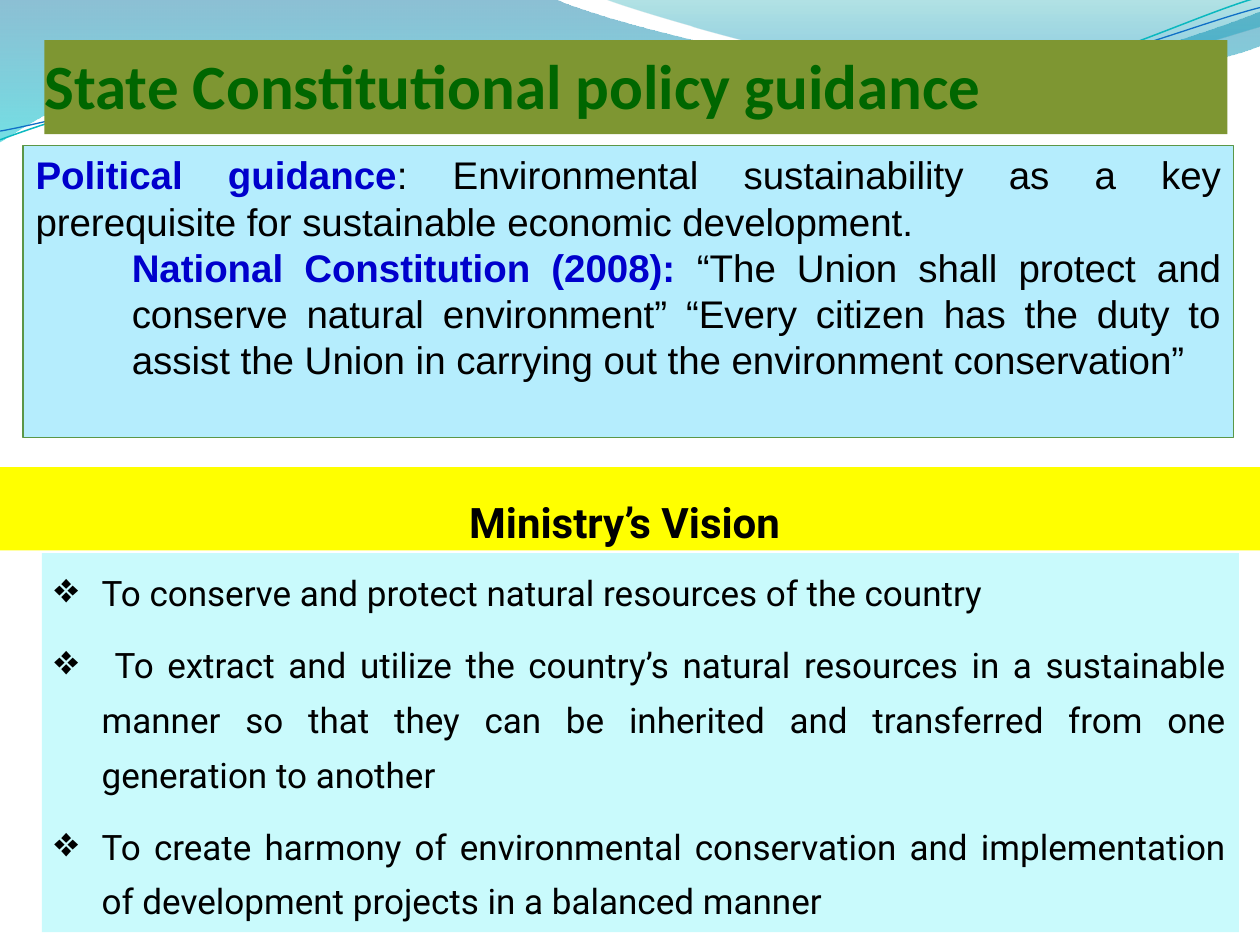
import math

from lxml import etree
from pptx import Presentation
from pptx.dml import color
from pptx.enum import shapes, text
from pptx.oxml import ns
from pptx.util import Pt

HUES = {
    "blue": "0074A1", "cyan": "00C6CF", "teal": "00A1A9", "sea": "008BBF",
    "aqua": "0AB8BF", "royal": "0F6FC6", "olive": "7E9632", "green": "006600",
    "sky": "B5EDFD", "edge": "5B9747", "navy": "0000CC", "yellow": "FFFF00",
    "ice": "C9FAFC", "black": "000000",
}
LEFT, MID, JUST = (text.PP_ALIGN.LEFT, text.PP_ALIGN.CENTER,
                   text.PP_ALIGN.JUSTIFY)
TOP, HALF = text.MSO_ANCHOR.TOP, text.MSO_ANCHOR.MIDDLE
TILT = 2.7

WAVES = [
    ((0, -0.7), [
        [(316.8, -0.7)],
        [(342.7, 12.2), (478.1, 45.4), (545.8, 45.4)],
        [(614.2, 45.4), (689.8, 18.7), (720, 6.5)],
        [(720.7, 25.9)],
        [(707.8, 31.7), (626.4, 54.7), (537.1, 54)],
        [(447.8, 54), (275, 20.2), (185, 24.5)],
        [(92.9, 25.2), (33.1, 59.8), (-0.7, 81.4)],
    ], [(0, "blue", 45), (1, "cyan", 55)]),
    ((344.9, -0.7), [
        [(366.5, 7.9), (491, 44.6), (553.7, 46.8)],
        [(616.3, 49.7), (691.9, 23), (720, 15.1)],
        [(720, 0)],
    ], [(0, "teal", 30), (0.8, "sea", 45)]),
]
CURVES = [
    ((0, 79.9), [
        [(34.6, 67), (113.8, 41), (199.4, 37.4)],
        [(284.4, 33.8), (427, 64.1), (513.4, 57.6)],
        [(599.8, 51.1), (675.4, 10.8), (718.6, -1.4)],
    ], "aqua", 0.85),
    ((0, 74.9), [
        [(33.8, 69.1), (118.1, 43.9), (203.8, 40.3)],
        [(290.2, 36.7), (429.8, 59.8), (516.2, 54)],
        [(601.9, 48.2), (677.5, 15.1), (720, 4.3)],
    ], "royal", 0.75),
]
POLICY = [
    (0, [("Political guidance", True),
         (": Environmental sustainability as a key prerequisite for "
          "sustainable economic development.", False)]),
    (55, [("National Constitution (2008): ", True),
          ("“The Union shall protect and conserve natural environment” "
           "“Every citizen has the duty to assist the Union in carrying out "
           "the environment conservation”", False)]),
]
GOALS = [
    "To conserve and protect natural resources of the country",
    " To extract and utilize the country’s natural resources in a sustainable "
    "manner so that they can be inherited and transferred from one "
    "generation to another",
    "To create harmony of environmental conservation and implementation of "
    "development projects in a balanced manner",
]


def rgb(name):
    return color.RGBColor.from_string(HUES[name])


def apply(item, vals):
    for key, val in vals.items():
        setattr(item, key, val)


def child(node, tag, **vals):
    return etree.SubElement(node, ns.qn(tag),
                            {key: str(val) for key, val in vals.items()})


def paint(item, hue):
    item.fill.solid()
    item.fill.fore_color.rgb = rgb(hue)


def turn(dot, hub=(359.3, 41)):
    ang = math.radians(TILT)
    x, y = dot[0] - hub[0], dot[1] - hub[1]
    return (hub[0] + x * math.cos(ang) - y * math.sin(ang),
            hub[1] + x * math.sin(ang) + y * math.cos(ang))


def draw(slide, start, steps, close):
    pen = slide.shapes.build_freeform(*map(Pt, start), scale=1)
    pen.add_line_segments([tuple(map(Pt, step[-1])) for step in steps],
                          close=close)
    shape = pen.convert_to_shape()
    shape.shadow.inherit = False
    lines = list(shape.element.iter(ns.qn("a:lnTo")))
    for line, step in zip(lines, steps):
        if len(step) == 3:
            bend = etree.Element(ns.qn("a:cubicBezTo"))
            for x, y in step:
                child(bend, "a:pt", x=Pt(x) - shape.left, y=Pt(y) - shape.top)
            line.getparent().replace(line, bend)
    return shape


def add_waves(slide):
    for start, steps, stops in WAVES:
        wave = draw(slide, start, steps, True)
        wave.line.fill.background()
        wave.fill.gradient()
        wave.fill.gradient_angle = 270
        for stop, (pos, hue, alpha) in zip(wave.fill.gradient_stops, stops):
            stop.position = pos
            stop.color.rgb = rgb(hue)
        tones = wave.element.spPr.iter(ns.qn("a:srgbClr"))
        for tone, (pos, hue, alpha) in zip(tones, stops):
            child(tone, "a:alpha", val=alpha * 1000)
    for start, steps, hue, width in CURVES:
        flat = [[turn(dot) for dot in step] for step in steps]
        curve = draw(slide, turn(start), flat, False)
        curve.rotation = 360 - TILT
        curve.fill.background()
        curve.line.color.rgb = rgb(hue)
        curve.line.width = Pt(width)


def add_panel(slide, box, hue, anchor=TOP):
    panel = slide.shapes.add_shape(shapes.MSO_SHAPE.RECTANGLE, *map(Pt, box))
    panel.shadow.inherit = False
    paint(panel, hue)
    panel.line.fill.background()
    apply(panel.text_frame, {"word_wrap": True, "vertical_anchor": anchor})
    return panel


def add_para(frame, first, runs, face, size, vals):
    para = frame.paragraphs[0] if first else frame.add_paragraph()
    apply(para, vals)
    for words, hue, bold in runs:
        run = para.add_run()
        run.text = words
        apply(run.font, {"name": face, "size": Pt(size), "bold": bold})
        run.font.color.rgb = rgb(hue)
    return para


def add_goals(slide, box):
    frame = add_panel(slide, box, "ice").text_frame
    vals = {"alignment": JUST, "line_spacing": 1.3, "space_after": Pt(10)}
    for i, goal in enumerate(GOALS):
        para = add_para(frame, i == 0, [(goal, "black", False)],
                        "Roboto", 20, vals)
        props = para._p.get_or_add_pPr()
        props.set("marL", str(Pt(27)))
        props.set("indent", str(Pt(-27)))
        child(props, "a:buSzPct", val=120000)
        child(props, "a:buChar", char="❖")


def add_vision(slide, box):
    frame = add_panel(slide, box, "yellow", HALF).text_frame
    add_para(frame, True, [("Ministry’s Vision ", "black", True)],
             "Roboto", 24, {"alignment": MID, "line_spacing": 1.5})


def add_title(slide, box):
    title = slide.shapes.title
    apply(title, dict(zip(("left", "top", "width", "height"), map(Pt, box))))
    paint(title, "olive")
    frame = title.text_frame
    apply(frame, {"margin_left": 0, "margin_top": Pt(3.6), "margin_right": 0,
                  "margin_bottom": 0, "word_wrap": True,
                  "vertical_anchor": TOP,
                  "auto_size": text.MSO_AUTO_SIZE.NONE})
    add_para(frame, True,
             [("State Constitutional policy guidance", "green", True)],
             "Calibri", 36, {"alignment": LEFT})
    title.element.getparent().append(title.element)


def add_policy(slide, box):
    panel = add_panel(slide, box, "sky")
    panel.line.color.rgb = rgb("edge")
    panel.line.width = Pt(0.75)
    for i, (left, parts) in enumerate(POLICY):
        runs = [(words, "navy" if bold else "black", bold)
                for words, bold in parts]
        para = add_para(panel.text_frame, i == 0, runs, "Arial", 22,
                        {"alignment": JUST})
        para._p.get_or_add_pPr().set("marL", str(Pt(left)))


def main():
    deck = Presentation()
    apply(deck, {"slide_width": Pt(720), "slide_height": Pt(540)})
    slide = deck.slides.add_slide(deck.slide_layouts[5])
    add_waves(slide)
    add_goals(slide, (24, 316, 684, 216.7))
    add_vision(slide, (0, 267, 720, 47.5))
    add_title(slide, (25.4, 22.9, 676, 53.8))
    add_policy(slide, (13.2, 83, 691.8, 167))
    deck.save("out.pptx")


if __name__ == "__main__":
    main()
